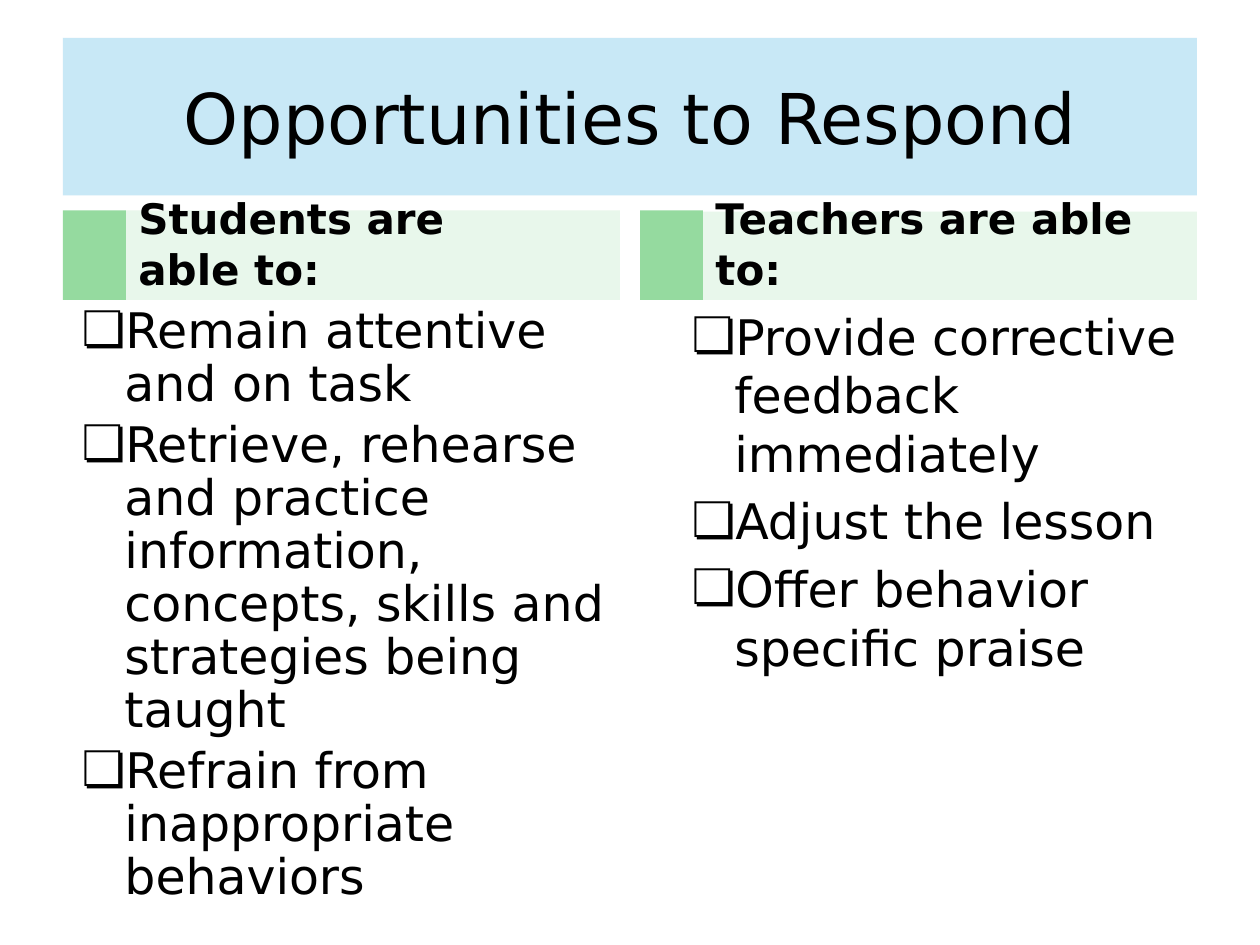
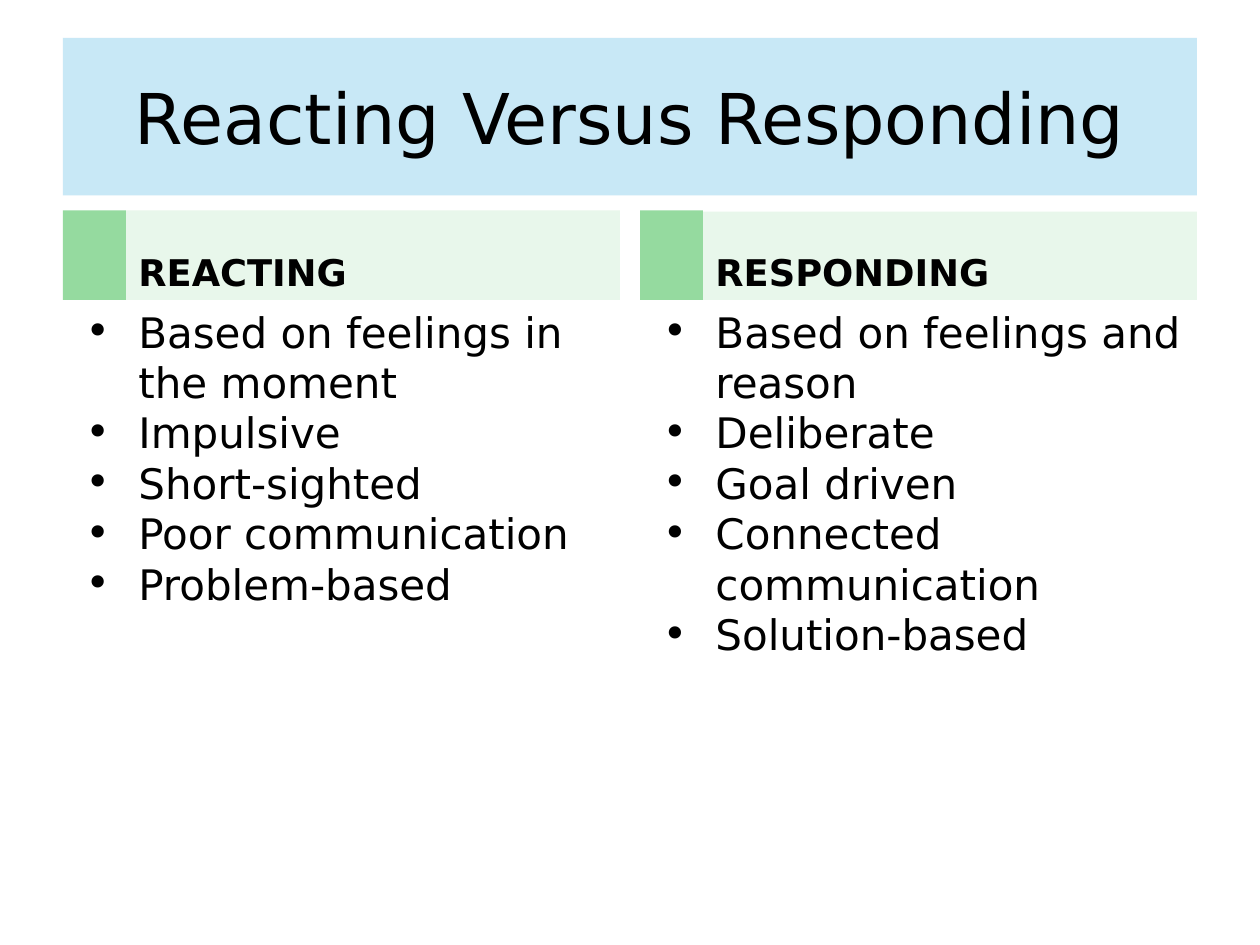
import dataclasses

import lxml.etree
import pptx
import pptx.dml.color
import pptx.enum.shapes
import pptx.enum.text
import pptx.oxml.ns
import pptx.util

Inches = pptx.util.Inches
Pt = pptx.util.Pt
Color = pptx.dml.color.RGBColor.from_string
Align = pptx.enum.text.PP_ALIGN
Anchor = pptx.enum.text.MSO_ANCHOR
qn = pptx.oxml.ns.qn


@dataclasses.dataclass(frozen=True)
class Theme:
    font: str = "DejaVu Sans"
    ink: str = "000000"
    paper: str = "FFFFFF"
    sky: str = "A9DCF2"
    leaf: str = "95DA9F"
    mint: str = "E8F7EB"
    title: int = 40


theme = Theme()
LEFTS = (0.5, 5.08)
TAB = 0.5
HEADS = ((1.67, 0.71), (1.68, 0.7))

slides = [
    {
        "title": "Opportunities to Respond",
        "alpha": 63,
        "head": {"size": 24, "before": 0},
        "list": {"size": 28, "mark": "❏", "margin": 0.81, "indent": -0.34, "level": 1},
        "sides": [
            {
                "head": ["Students are", "able to:"],
                "box": (0.08, 2.38, 4.84, 4.92),
                "before": (0, 4.8),
                "line": 0.9,
                "items": [
                    "Remain attentive and on task",
                    "Retrieve, rehearse and practice information, concepts, "
                    "skills and strategies being taught",
                    "Refrain from inappropriate behaviors",
                ],
            },
            {
                "head": ["Teachers are able to:"],
                "box": (4.92, 2.38, 4.61, 4.32),
                "before": (0, 4.8),
                "line": 1.0,
                "items": [
                    "Provide corrective feedback immediately",
                    "Adjust the lesson",
                    "Offer behavior specific praise",
                ],
            },
        ],
    },
    {
        "title": "Reacting Versus Responding",
        "alpha": 64,
        "head": {"size": 21, "before": 4.2},
        "list": {"size": 24, "mark": "•", "margin": 0.5, "indent": -0.42, "level": 0},
        "sides": [
            {
                "head": ["REACTING"],
                "box": (0.5, 2.38, 4.42, 4.32),
                "before": (5.6, 0),
                "line": 1.0,
                "items": [
                    "Based on feelings in the moment",
                    "Impulsive",
                    "Short-sighted",
                    "Poor communication",
                    "Problem-based",
                ],
            },
            {
                "head": ["RESPONDING"],
                "box": (5.08, 2.38, 4.42, 4.32),
                "before": (4.8, 0),
                "line": 1.0,
                "items": [
                    "Based on feelings and reason",
                    "Deliberate",
                    "Goal driven",
                    "Connected communication",
                    "Solution-based",
                ],
            },
        ],
    },
]


def add_band(slide, box, fill):
    band = slide.shapes.add_shape(
        pptx.enum.shapes.MSO_SHAPE.RECTANGLE, *map(Inches, box))
    band.shadow.inherit = False
    band.fill.solid()
    band.fill.fore_color.rgb = Color(fill)
    band.line.fill.background()
    return band


def add_text(shape, lines, anchor, font, para, before=(0, 0)):
    """Fill a shape with lines; before holds the space above the first and the rest."""
    frame = shape.text_frame
    frame.word_wrap = True
    frame.vertical_anchor = anchor
    frame.text = "\n".join(lines)
    for place, par in enumerate(frame.paragraphs):
        style = {"space_before": Pt(before[min(place, 1)]), **para}
        for name, value in style.items():
            setattr(par, name, value)
        for name, value in {"name": theme.font, **font}.items():
            setattr(par.runs[0].font, name, value)
        par.runs[0].font.color.rgb = Color(theme.ink)
    return frame


deck = pptx.Presentation()
deck.slide_width, deck.slide_height = Inches(10), Inches(7.5)

for page in slides:
    slide = deck.slides.add_slide(deck.slide_layouts[6])
    slide.background.fill.solid()
    slide.background.fill.fore_color.rgb = Color(theme.paper)

    for left in LEFTS:
        add_band(slide, (left, 1.67, TAB, 0.71), theme.leaf)

    band = add_band(slide, (0.5, 0.3, 9, 1.25), theme.sky)
    tint = band.fill._xPr.find(".//" + qn("a:srgbClr"))
    lxml.etree.SubElement(tint, qn("a:alpha"), val=str(page["alpha"] * 1000))
    add_text(band, [page["title"]], Anchor.MIDDLE,
             {"size": Pt(theme.title)}, {"alignment": Align.CENTER})

    head, bullet = page["head"], page["list"]
    for left, (top, height), side in zip(LEFTS, HEADS, page["sides"]):
        band = add_band(slide, (left + TAB, top, 3.92, height), theme.mint)
        add_text(band, side["head"], Anchor.BOTTOM,
                 {"size": Pt(head["size"]), "bold": True},
                 {"alignment": Align.LEFT}, (head["before"], 0))

        box = slide.shapes.add_textbox(*map(Inches, side["box"]))
        frame = add_text(box, side["items"], Anchor.TOP,
                         {"size": Pt(bullet["size"])},
                         {"alignment": Align.LEFT, "level": bullet["level"],
                          "line_spacing": side["line"]}, side["before"])
        for par in frame.paragraphs:
            props = par._p.get_or_add_pPr()
            props.set("marL", str(Inches(bullet["margin"])))
            props.set("indent", str(Inches(bullet["indent"])))
            tint = lxml.etree.SubElement(props, qn("a:buClr"))
            lxml.etree.SubElement(tint, qn("a:srgbClr"), val=theme.ink)
            lxml.etree.SubElement(props, qn("a:buFont"), typeface=theme.font)
            lxml.etree.SubElement(props, qn("a:buChar"), char=bullet["mark"])

deck.save("out.pptx")
